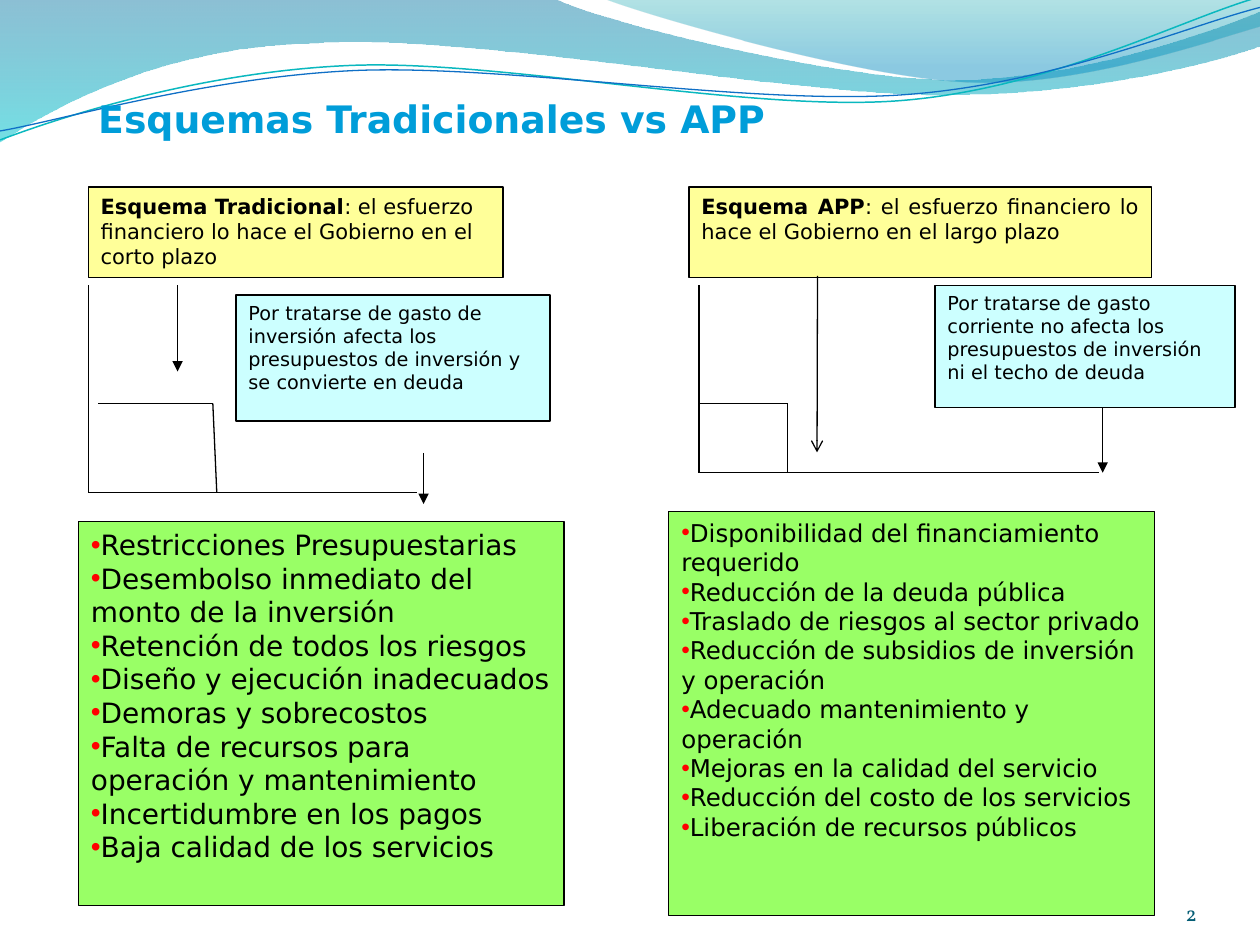
"""Build the slide that compares traditional and APP financing schemes."""
from math import cos, radians, sin

from lxml.etree import Element, SubElement
from pptx import Presentation
from pptx.dml.color import RGBColor
from pptx.enum.shapes import MSO_CONNECTOR as Connector, MSO_SHAPE as Shape
from pptx.enum.text import MSO_ANCHOR as Anchor, MSO_AUTO_SIZE as AutoSize, PP_ALIGN as Align
from pptx.oxml.ns import qn
from pptx.util import Cm, Pt

COLORS = {
    "title": "009DD9", "number": "045D75", "ink": "000000", "bullet": "FF0000",
    "scheme": "FFFF99", "note": "CCFFFF", "list": "99FF66",
    "teal": "0AB8BF", "blue": "0F6FC6",
    "broad start": "0074A1", "broad end": "00C6CF",
    "corner start": "00A1A9", "corner end": "008BBF",
}
BROAD_WAVE = [
    (0, 0), (11.18, -0.03),
    (12.09, 0.43, 16.87, 1.6, 19.25, 1.6), (21.67, 1.6, 24.33, 0.66, 25.4, 0.23),
    (25.43, 0.91),
    (24.97, 1.12, 22.1, 1.93, 18.95, 1.91), (15.8, 1.91, 9.7, 0.71, 6.53, 0.86),
    (3.28, 0.91, 1.17, 2.11, -0.03, 2.87), (0, 0),
]
CORNER_WAVE = [
    (12.17, -0.03),
    (12.93, 0.28, 17.32, 1.57, 19.53, 1.65), (21.74, 1.75, 24.41, 0.81, 25.4, 0.53),
    (25.4, 0), (12.17, -0.03),
]
TEAL_WAVE = [
    (0, 2.82), (1.22, 2.36, 4.01, 1.45, 7.04, 1.32),
    (10.03, 1.19, 15.06, 2.26, 18.11, 2.03), (21.16, 1.8, 23.83, 0.38, 25.35, -0.05),
]
BLUE_WAVE = [
    (0, 2.64), (1.19, 2.44, 4.17, 1.55, 7.19, 1.42),
    (10.24, 1.3, 15.16, 2.13, 18.21, 1.91), (21.23, 1.7, 23.9, 0.53, 25.4, 0.15),
]
CHART_LINES = [
    (1.78, 5.75, 1.78, 9.91), (1.78, 9.93, 8.41, 9.93),
    (1.98, 8.13, 4.29, 8.13), (4.29, 8.13, 4.37, 9.93),
    (14.09, 5.75, 14.09, 9.53), (14.09, 9.53, 22.15, 9.53),
    (14.09, 8.13, 15.88, 8.13), (15.88, 8.13, 15.88, 9.53),
]
ARROWS = [
    (3.58, 5.75, 3.58, 7.49, "triangle"), (8.54, 9.13, 8.54, 10.16, "triangle"),
    (22.23, 8.13, 22.23, 9.53, "triangle"), (16.48, 5.56, 16.47, 9.12, "arrow"),
]
DRAWBACKS = [
    "Restricciones Presupuestarias",
    "Desembolso inmediato del monto de la inversión",
    "Retención de todos los riesgos",
    "Diseño y ejecución inadecuados",
    "Demoras y sobrecostos",
    "Falta de recursos para operación y mantenimiento",
    "Incertidumbre en los pagos",
    "Baja calidad de los servicios",
]
BENEFITS = [
    "Disponibilidad del financiamiento requerido",
    "Reducción de la deuda pública",
    "Traslado de riesgos al sector privado",
    "Reducción de subsidios de inversión y operación",
    "Adecuado mantenimiento y operación",
    "Mejoras en la calidad del servicio",
    "Reducción del costo de los servicios",
    "Liberación de recursos públicos",
]


def rgb(name):
    return RGBColor.from_string(COLORS[name])


def turn(outline, degrees, center=(12.67, 1.46)):
    c, s = cos(radians(degrees)), sin(radians(degrees))
    turned = []
    for segment in outline:
        pairs = [(x - center[0], y - center[1]) for x, y in zip(segment[::2], segment[1::2])]
        turned.append(tuple(
            value for x, y in pairs
            for value in (center[0] + x * c - y * s, center[1] + x * s + y * c)
        ))
    return turned


class SlideBuilder:
    def __init__(self, slide, font="DejaVu Sans", line_width=0.75):
        self.slide = slide
        self.shapes = slide.shapes
        self.font = font
        self.line_width = line_width

    def style(self, para, size, color="ink", bold=None, font=None):
        para.font.name = font or self.font
        para.font.size = Pt(size)
        para.font.color.rgb = rgb(color)
        para.font.bold = bold

    def place(self, shape, area):
        shape.left, shape.top, shape.width, shape.height = map(Cm, area)

    def paint(self, shape, color):
        shape.fill.solid()
        shape.fill.fore_color.rgb = rgb(color)
        shape.line.color.rgb = rgb("ink")
        shape.line.width = Pt(self.line_width)

    def frame(self, shape, anchor, margins=None):
        frame = shape.text_frame
        frame.word_wrap = True
        frame.auto_size = AutoSize.NONE
        frame.vertical_anchor = anchor
        if margins:
            (frame.margin_left, frame.margin_top,
             frame.margin_right, frame.margin_bottom) = map(Cm, margins)
        return frame

    def wave(self, outline, closed):
        points = [tuple(map(Cm, segment[-2:])) for segment in outline]
        builder = self.shapes.build_freeform(*points[0])
        builder.add_line_segments(points[1:], close=closed)
        shape = builder.convert_to_shape()
        shape.shadow.inherit = False
        for node, segment in zip(list(shape.element.iter(qn("a:lnTo"))), outline[1:]):
            if len(segment) == 6:
                curve = Element(qn("a:cubicBezTo"))
                for x, y in zip(segment[::2], segment[1::2]):
                    SubElement(curve, qn("a:pt"), x=str(Cm(x) - shape.left),
                               y=str(Cm(y) - shape.top))
                node.getparent().replace(node, curve)
        self.shapes.title.element.addprevious(shape.element)
        return shape

    def filled_wave(self, outline, stops):
        shape = self.wave(outline, True)
        shape.line.fill.background()
        shape.fill.gradient()
        shape.fill.gradient_angle = 270
        for stop, (position, color, _) in zip(shape.fill.gradient_stops, stops):
            stop.position = position
            stop.color.rgb = rgb(color)
        for node, (_, _, opacity) in zip(shape.element.spPr.iter(qn("a:srgbClr")), stops):
            SubElement(node, qn("a:alpha"), val=str(opacity * 1000))

    def line_wave(self, outline, color, width, tilt=2.7):
        shape = self.wave(turn(outline, tilt), False)
        shape.rotation = 360 - tilt
        shape.fill.background()
        shape.line.color.rgb = rgb(color)
        shape.line.width = Pt(width)

    def title(self, text, area):
        title = self.shapes.title
        self.place(title, area)
        frame = self.frame(title, Anchor.BOTTOM, (0, 0.13, 0, 0))
        frame.text = text
        para = frame.paragraphs[0]
        para.alignment = Align.LEFT
        self.style(para, 21.6, "title", True)

    def page_number(self, text, area):
        box = self.shapes.add_textbox(*map(Cm, area))
        frame = self.frame(box, Anchor.BOTTOM, (0, 0, 0, 0))
        frame.text = text
        para = frame.paragraphs[0]
        para.alignment = Align.RIGHT
        self.style(para, 12, "number", font="Vollkorn")

    def box(self, area, color, size, text, heading="", align=Align.LEFT):
        shape = self.shapes.add_shape(Shape.RECTANGLE, *map(Cm, area))
        shape.shadow.inherit = False
        self.paint(shape, color)
        para = self.frame(shape, Anchor.TOP).paragraphs[0]
        para.alignment = align
        self.style(para, size)
        if heading:
            span = para.add_run()
            span.text = heading
            span.font.bold = True
        para.add_run().text = text

    def bullets(self, index, area, size, items):
        body = self.slide.placeholders[index]
        self.place(body, area)
        self.paint(body, "list")
        frame = self.frame(body, Anchor.TOP)
        frame.text = "\n".join(items)
        for para in frame.paragraphs:
            para.space_before = Pt(0)
            props = para._p.get_or_add_pPr()
            props.set("marL", "0")
            props.set("indent", "0")
            bullet_color = SubElement(props, qn("a:buClr"))
            SubElement(bullet_color, qn("a:srgbClr"), val=COLORS["bullet"])
            SubElement(props, qn("a:buChar"), char="•")
            self.style(para, size)

    def line(self, x1, y1, x2, y2, head=None):
        line = self.shapes.add_connector(Connector.STRAIGHT, *map(Cm, (x1, y1, x2, y2)))
        line.line.color.rgb = rgb("ink")
        line.line.width = Pt(self.line_width)
        props = line.element.spPr
        if head:
            SubElement(props.find(qn("a:ln")), qn("a:tailEnd"), type=head)
        SubElement(props, qn("a:effectLst"))


def main():
    deck = Presentation()
    deck.slide_width, deck.slide_height = Cm(25.4), Cm(19.05)
    page = SlideBuilder(deck.slides.add_slide(deck.slide_layouts[3]))
    page.filled_wave(BROAD_WAVE, [(0, "broad start", 45), (1, "broad end", 55)])
    page.filled_wave(CORNER_WAVE, [(0, "corner start", 30), (0.8, "corner end", 45)])
    page.line_wave(TEAL_WAVE, "teal", 0.85)
    page.line_wave(BLUE_WAVE, "blue", 0.75)
    page.title("Esquemas Tradicionales vs APP", (1.98, 1.78, 21.59, 1.07))
    page.page_number("2", (22.02, 17.65, 2.11, 1.02))
    effort = ": el esfuerzo financiero lo hace el Gobierno en el {} plazo"
    page.box((1.78, 3.77, 8.36, 1.83), "scheme", 12, effort.format("corto"),
             "Esquema Tradicional")
    page.box((13.89, 3.77, 9.32, 1.83), "scheme", 12, effort.format("largo"),
             "Esquema APP", Align.JUSTIFY)
    for segment in CHART_LINES + ARROWS:
        page.line(*segment)
    budget = "Por tratarse de gasto {} los presupuestos de inversión {} deuda"
    page.box((4.76, 5.95, 6.33, 2.54), "note", 11,
             budget.format("de inversión afecta", "y se convierte en"))
    page.box((18.85, 5.75, 6.05, 2.46), "note", 11,
             budget.format("corriente no afecta", "ni el techo de"))
    page.bullets(1, (1.58, 10.51, 9.79, 7.74), 16, DRAWBACKS)
    page.bullets(2, (13.48, 10.31, 9.8, 8.14), 14, BENEFITS)
    deck.save("out.pptx")


if __name__ == "__main__":
    main()
